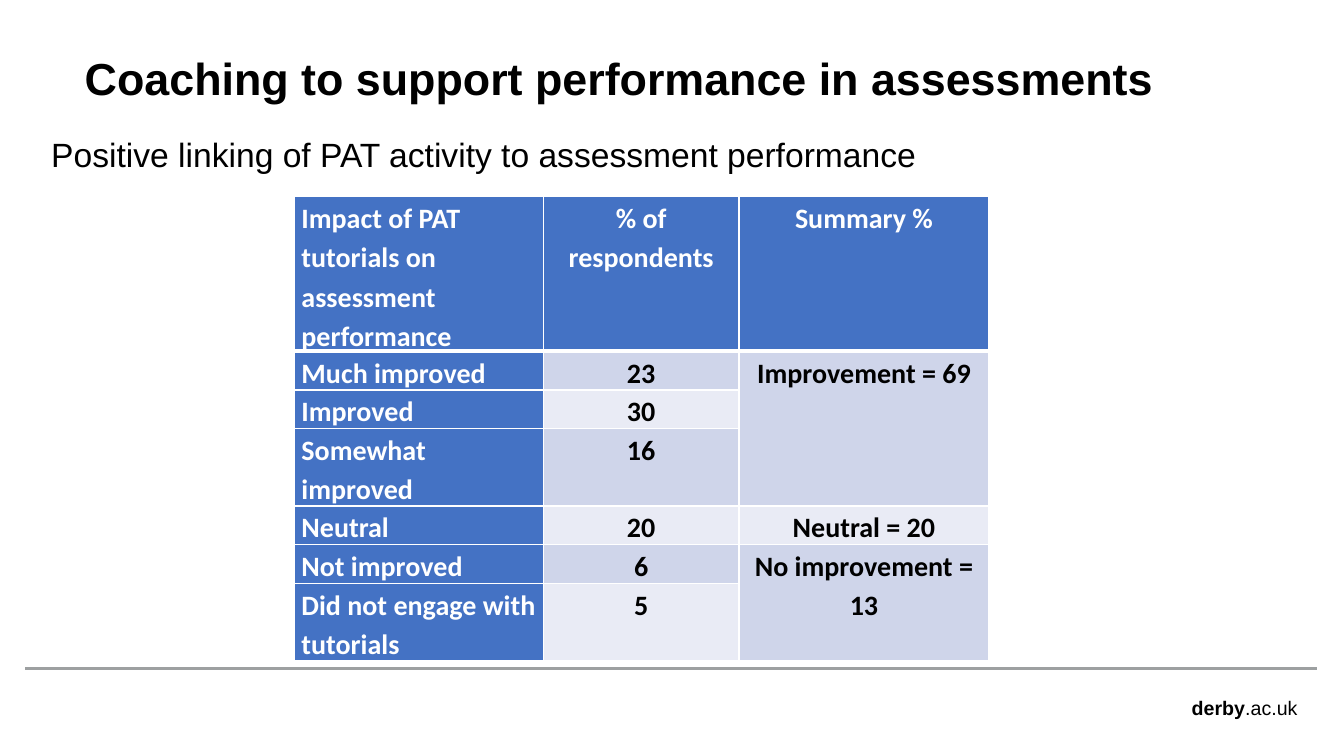
"""Build the slide on coaching to support performance in assessments."""
from dataclasses import dataclass

from lxml import etree
from pptx import Presentation
from pptx.dml.color import RGBColor
from pptx.enum.shapes import MSO_CONNECTOR
from pptx.enum.text import MSO_ANCHOR, PP_ALIGN
from pptx.oxml.ns import qn
from pptx.util import Inches, Pt

BLACK = RGBColor(0x00, 0x00, 0x00)
WHITE = RGBColor(0xFF, 0xFF, 0xFF)
GREY = RGBColor(0x9D, 0xA0, 0xA1)
BLUE = RGBColor(0x44, 0x72, 0xC4)
BAND_DARK = RGBColor(0xCF, 0xD5, 0xEA)
BAND_LIGHT = RGBColor(0xE9, 0xEB, 0xF5)

LEFT, CENTER = PP_ALIGN.LEFT, PP_ALIGN.CENTER
TOP, BOTTOM = MSO_ANCHOR.TOP, MSO_ANCHOR.BOTTOM
STRAIGHT = MSO_CONNECTOR.STRAIGHT


@dataclass(frozen=True)
class Span:
    text: str
    bold: bool = False


@dataclass(frozen=True)
class TextBlock:
    left: float
    top: float
    width: float
    height: float
    size: int
    spans: tuple[Span, ...]
    align: PP_ALIGN = LEFT
    anchor: MSO_ANCHOR = TOP
    line_spacing: float = 0.9


@dataclass(frozen=True)
class TableRow:
    height: float
    cells: tuple[str, str, str]
    summary_rows: int = 1


TEXT_BLOCKS = (
    TextBlock(11.72, 6.85, 1.31, 0.34, 14,
              (Span("derby", True), Span(".ac.uk")), line_spacing=1.0),
    TextBlock(0.41, 0.41, 11.47, 0.68, 32,
              (Span("Coaching to support performance in assessments", True),),
              CENTER, BOTTOM),
    TextBlock(0.41, 1.32, 12.81, 5.09, 24,
              (Span("Positive linking of PAT activity to assessment performance"),)),
)

COLUMN_WIDTHS = (2.47, 1.94, 2.48)
TABLE_ROWS = (
    TableRow(1.46, ("Impact of PAT tutorials on assessment performance",
                    "% of respondents", "Summary %")),
    TableRow(0.35, ("Much improved", "23", "Improvement = 69"), 3),
    TableRow(0.35, ("Improved", "30", "")),
    TableRow(0.72, ("Somewhat improved", "16", "")),
    TableRow(0.35, ("Neutral", "20", "Neutral = 20")),
    TableRow(0.35, ("Not improved", "6", "No improvement = 13"), 2),
    TableRow(0.72, ("Did not engage with tutorials", "5", "")),
)


def add_text(page, block: TextBlock) -> None:
    """Add a text box holding one paragraph."""
    box = page.shapes.add_textbox(Inches(block.left), Inches(block.top),
                                  Inches(block.width), Inches(block.height))
    frame = box.text_frame
    frame.word_wrap = True
    frame.vertical_anchor = block.anchor
    para = frame.paragraphs[0]
    para.alignment = block.align
    para.line_spacing = block.line_spacing
    para.font.name = "Arial"
    para.font.size = Pt(block.size)
    para.font.color.rgb = BLACK
    for span in block.spans:
        run = para.add_run()
        run.text = span.text
        run.font.bold = span.bold


def add_footer_line(page) -> None:
    """Add the grey rule above the footer."""
    line = page.shapes.add_connector(STRAIGHT, Inches(13.06), Inches(6.63),
                                     Inches(0.25), Inches(6.63))
    line.line.color.rgb = GREY
    line.line.width = Pt(2)
    etree.SubElement(line._element.spPr, qn("a:effectLst"))


def add_borders(cell, row_index: int) -> None:
    """Give a cell white borders, thicker below the header row."""
    properties = cell._tc.get_or_add_tcPr()
    widths = {"lnL": 1, "lnR": 1,
              "lnT": 3 if row_index == 1 else 1,
              "lnB": 3 if row_index == 0 else 1}
    for side, width in widths.items():
        border = etree.SubElement(properties, qn(f"a:{side}"), w=str(Pt(width)))
        fill = etree.SubElement(border, qn("a:solidFill"))
        etree.SubElement(fill, qn("a:srgbClr"), val=str(WHITE))


def style_cell(cell, text: str, row_index: int, column_index: int) -> None:
    """Write and format one table cell."""
    heading = row_index == 0 or column_index == 0
    band = BAND_DARK if row_index % 2 else BAND_LIGHT
    add_borders(cell, row_index)
    cell.fill.solid()
    cell.fill.fore_color.rgb = BLUE if heading else band
    cell.margin_left = cell.margin_right = Inches(0.07)
    cell.margin_top = cell.margin_bottom = 0
    cell.text = text
    para = cell.text_frame.paragraphs[0]
    para.alignment = CENTER if column_index else LEFT
    para.line_spacing = 1.15
    para.space_after = Pt(8)
    para.font.name = "Calibri"
    para.font.size = Pt(20)
    para.font.bold = True
    para.font.color.rgb = WHITE if heading else BLACK


def add_results_table(page) -> None:
    """Add the table of responses with its merged summary cells."""
    table = page.shapes.add_table(
        len(TABLE_ROWS), len(COLUMN_WIDTHS), Inches(2.92), Inches(1.95),
        Inches(sum(COLUMN_WIDTHS)),
        Inches(sum(row.height for row in TABLE_ROWS))).table
    table.first_col = True
    for column, width in zip(table.columns, COLUMN_WIDTHS):
        column.width = Inches(width)
    for row_index, row in enumerate(TABLE_ROWS):
        table.rows[row_index].height = Inches(row.height)
        for column_index, text in enumerate(row.cells):
            style_cell(table.cell(row_index, column_index), text,
                       row_index, column_index)
    last_column = len(COLUMN_WIDTHS) - 1
    for row_index, row in enumerate(TABLE_ROWS):
        if row.summary_rows > 1:
            last_row = row_index + row.summary_rows - 1
            table.cell(row_index, last_column).merge(
                table.cell(last_row, last_column))


def main() -> None:
    """Create and save the deck."""
    deck = Presentation()
    deck.slide_width, deck.slide_height = Inches(13.33), Inches(7.5)
    page = deck.slides.add_slide(deck.slide_layouts[6])
    add_footer_line(page)
    for block in TEXT_BLOCKS:
        add_text(page, block)
    add_results_table(page)
    deck.save("out.pptx")


if __name__ == "__main__":
    main()
